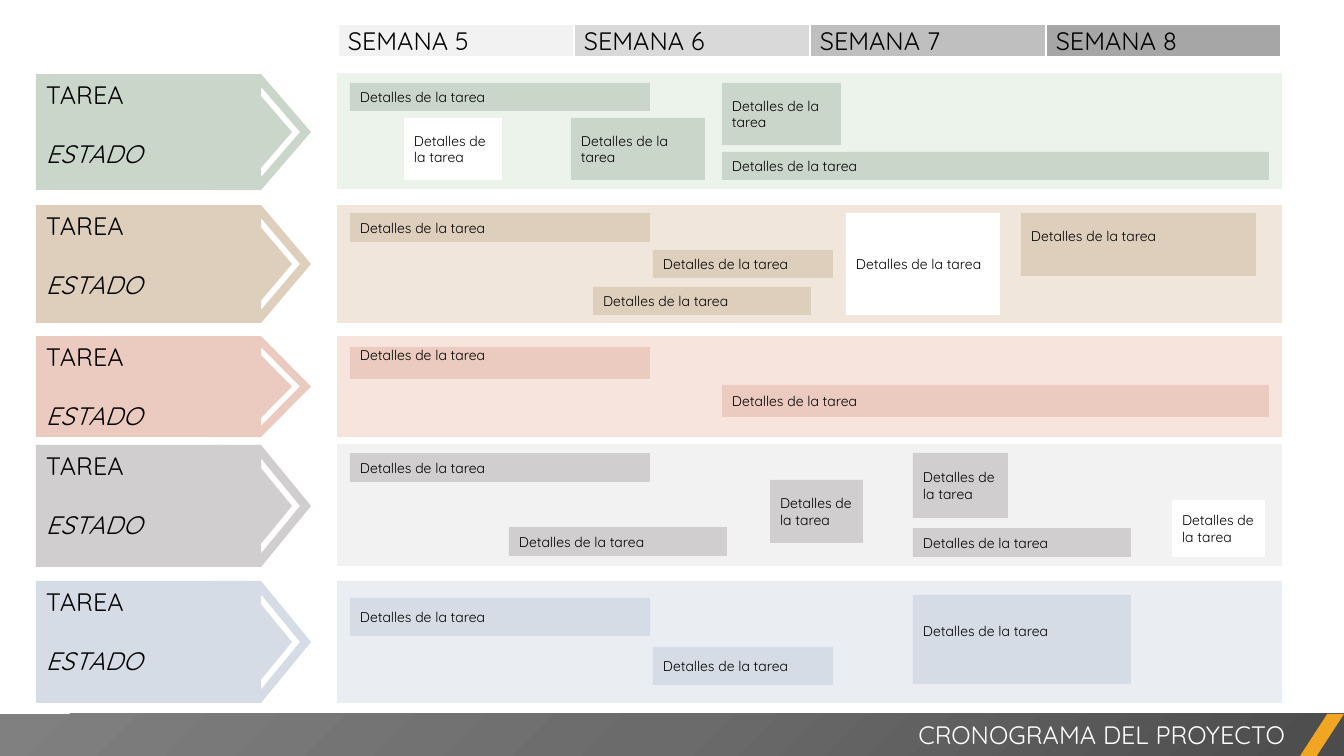
"""Build a project schedule slide with five task lanes across four weeks."""
from dataclasses import dataclass

from lxml.etree import SubElement
from pptx import Presentation
from pptx.dml.color import RGBColor
from pptx.enum.shapes import MSO_SHAPE
from pptx.enum.text import MSO_ANCHOR, MSO_AUTO_SIZE, PP_ALIGN
from pptx.oxml import parse_xml
from pptx.oxml.ns import nsdecls, qn
from pptx.util import Emu, Pt

SCALE = 12192000 / 1344
FONT = "Quicksand"
DETAIL = "Detalles de la tarea"
COLOURS = {
    "black": "000000", "white": "FFFFFF", "accent": "F0A622",
    "green": "CAD6CA", "green_pale": "ECF3EB",
    "sand": "DDCFBC", "sand_pale": "F0E6DC",
    "coral": "EBCBBF", "coral_pale": "F7E5DD",
    "grey": "D0CECE", "grey_pale": "F2F2F2",
    "blue": "D6DCE5", "blue_pale": "EAEEF3",
    "week_5": "F2F2F2", "week_6": "D9D9D9", "week_7": "BFBFBF", "week_8": "A6A6A6",
    "bar_dark": "4C4C4C", "bar_middle": "6B6B6B", "bar_light": "808080",
}
CHEVRON_OUTLINE = ((261, 0), (215, 0), (215, 1), (261, 1), (311, 0.5))
CHEVRON_NOTCH = ((261, 0.81), (292, 0.5), (261, 0.19), (261, 0.11), (300, 0.5), (261, 0.89))


@dataclass(frozen=True)
class Detail:
    left: int
    top: int
    width: int
    height: int
    white: bool = False
    right_inset: int = 10
    bottom_inset: int = 5


@dataclass(frozen=True)
class Lane:
    colour: str
    label_top: int
    band_top: int
    height: int
    label_width: int
    details: tuple[Detail, ...]


LANES = (
    Lane("green", 74, 73, 116, 189, (
        Detail(350, 83, 300, 28), Detail(571, 118, 134, 62),
        Detail(404, 118, 98, 62, white=True),
        Detail(722, 83, 119, 62), Detail(722, 152, 547, 28))),
    Lane("coral", 336, 336, 101, 189, (
        Detail(350, 347, 300, 32, bottom_inset=22), Detail(722, 385, 547, 32))),
    Lane("sand", 205, 205, 118, 207, (
        Detail(350, 213, 300, 29), Detail(846, 213, 154, 102, white=True),
        Detail(1021, 213, 235, 63, bottom_inset=22),
        Detail(653, 250, 180, 28), Detail(593, 287, 218, 28))),
    Lane("grey", 445, 444, 122, 189, (
        Detail(350, 453, 300, 29), Detail(1172, 500, 93, 57, white=True, right_inset=0),
        Detail(913, 453, 95, 65, right_inset=4), Detail(770, 480, 93, 63, right_inset=4),
        Detail(509, 527, 218, 29), Detail(913, 528, 218, 29))),
    Lane("blue", 581, 581, 122, 207, (
        Detail(350, 598, 300, 38), Detail(653, 647, 180, 38),
        Detail(913, 595, 218, 89, bottom_inset=22))),
)


def px(length: float) -> Emu:
    """Turn pixels into EMU."""
    return Emu(round(length * SCALE))


def rgb(name: str) -> RGBColor:
    """Look up a named colour."""
    return RGBColor.from_string(COLOURS[name])


def add_text(frame, text: str, *, size: int, colour: str = "black", italic: bool = False,
             align=PP_ALIGN.LEFT, space_before: int = 0) -> None:
    """Write a formatted paragraph, using the empty first one if there is one."""
    para = frame.add_paragraph() if frame.text else frame.paragraphs[0]
    para.alignment = align
    para.space_before = Pt(space_before)
    span = para.add_run()
    span.text = text
    span.font.name = FONT
    span.font.size = Pt(size)
    span.font.italic = italic
    span.font.color.rgb = rgb(colour)


def paint(shape, colour: str) -> None:
    """Give a shape a flat fill without line or shadow."""
    shape.shadow.inherit = False
    shape.line.fill.background()
    shape.fill.solid()
    shape.fill.fore_color.rgb = rgb(colour)


def add_box(shapes, left: int, top: int, width: int, height: int, colour: str,
            kind=MSO_SHAPE.RECTANGLE):
    """Add a flat preset shape."""
    box = shapes.add_shape(kind, px(left), px(top), px(width), px(height))
    paint(box, colour)
    return box


def set_frame(frame, anchor, right: int = 10, bottom: int = 5) -> None:
    """Set wrapping, anchor and insets of a text frame."""
    frame.word_wrap = True
    frame.auto_size = MSO_AUTO_SIZE.NONE
    frame.vertical_anchor = anchor
    frame.margin_left, frame.margin_top = px(10), px(5)
    frame.margin_right, frame.margin_bottom = px(right), px(bottom)


def add_chevron(shapes, lane: Lane) -> None:
    """Add the arrow tip of a lane label with its notch cut out."""
    outline, notch = (
        [(px(x), px(lane.label_top + y * lane.height)) for x, y in points]
        for points in (CHEVRON_OUTLINE, CHEVRON_NOTCH))
    builder = shapes.build_freeform(*outline[0])
    builder.add_line_segments(outline[1:], close=True)
    builder.move_to(*notch[0])
    builder.add_line_segments(notch[1:], close=True)
    paint(builder.convert_to_shape(), lane.colour)


def add_lane(page, lane: Lane) -> None:
    """Add one task lane: label, arrow tip, band and details."""
    shapes = page.shapes.add_group_shape().shapes
    label = add_box(shapes, 36, lane.label_top, lane.label_width, lane.height, lane.colour)
    set_frame(label.text_frame, MSO_ANCHOR.TOP)
    add_text(label.text_frame, "TAREA", size=18)
    add_text(label.text_frame, "ESTADO", size=18, italic=True, space_before=21)
    add_chevron(shapes, lane)
    add_box(shapes, 337, lane.band_top, 945, lane.height, f"{lane.colour}_pale")
    for detail in lane.details:
        colour = "white" if detail.white else lane.colour
        box = add_box(shapes, detail.left, detail.top, detail.width, detail.height, colour)
        set_frame(box.text_frame, MSO_ANCHOR.MIDDLE, detail.right_inset, detail.bottom_inset)
        add_text(box.text_frame, DETAIL, size=10)


def add_borders(cell) -> None:
    """Draw white borders on all sides of a cell."""
    properties = cell._tc.get_or_add_tcPr()
    for index, side in enumerate(("lnL", "lnR", "lnT", "lnB")):
        line = parse_xml(f'<a:{side} {nsdecls("a")} w="{Pt(2.25)}"/>')
        fill = SubElement(line, qn("a:solidFill"))
        SubElement(fill, qn("a:srgbClr"), val=COLOURS["white"])
        properties.insert(index, line)


def add_weeks(page) -> None:
    """Add the header table of weeks."""
    table = page.shapes.add_table(1, 4, px(338), px(24), px(944), px(33)).table
    table.first_row = table.horz_banding = False
    for week, cell in enumerate(table.rows[0].cells, start=5):
        cell.fill.solid()
        cell.fill.fore_color.rgb = rgb(f"week_{week}")
        cell.vertical_anchor = MSO_ANCHOR.BOTTOM
        cell.margin_left, cell.margin_right = px(10), px(1)
        cell.margin_top, cell.margin_bottom = px(1), px(0)
        add_text(cell.text_frame, f"SEMANA {week}", size=18)
        add_borders(cell)


def add_footer(page) -> None:
    """Add the gradient bar, its accent and the title on top."""
    bar = add_box(page.shapes, 0, 714, 1344, 42, "bar_middle")
    stops = "".join(
        f'<a:gs pos="{place}"><a:srgbClr val="{COLOURS[name]}"/></a:gs>'
        for place, name in ((0, "bar_dark"), (50000, "bar_middle"), (100000, "bar_light")))
    gradient = parse_xml(
        f'<a:gradFill {nsdecls("a")} rotWithShape="1"><a:gsLst>{stops}</a:gsLst>'
        '<a:path path="circle"><a:fillToRect l="100000" t="100000"/></a:path></a:gradFill>')
    properties = bar.element.spPr
    properties.replace(properties.find(qn("a:solidFill")), gradient)
    accent = add_box(page.shapes, 1300, 714, 44, 42, "accent", MSO_SHAPE.PARALLELOGRAM)
    accent.adjustments[0] = 0.65
    title = page.shapes.title
    title.left, title.top, title.width, title.height = px(529), px(714), px(766), px(40)
    set_frame(title.text_frame, MSO_ANCHOR.TOP)
    add_text(title.text_frame, "CRONOGRAMA DEL PROYECTO", size=18, colour="white",
             align=PP_ALIGN.RIGHT)
    title.element.getparent().append(title.element)


def main() -> None:
    """Build and save the deck."""
    deck = Presentation()
    deck.slide_width, deck.slide_height = px(1344), px(756)
    page = deck.slides.add_slide(deck.slide_layouts[5])
    for lane in LANES:
        add_lane(page, lane)
    add_weeks(page)
    add_footer(page)
    deck.save("out.pptx")


if __name__ == "__main__":
    main()
